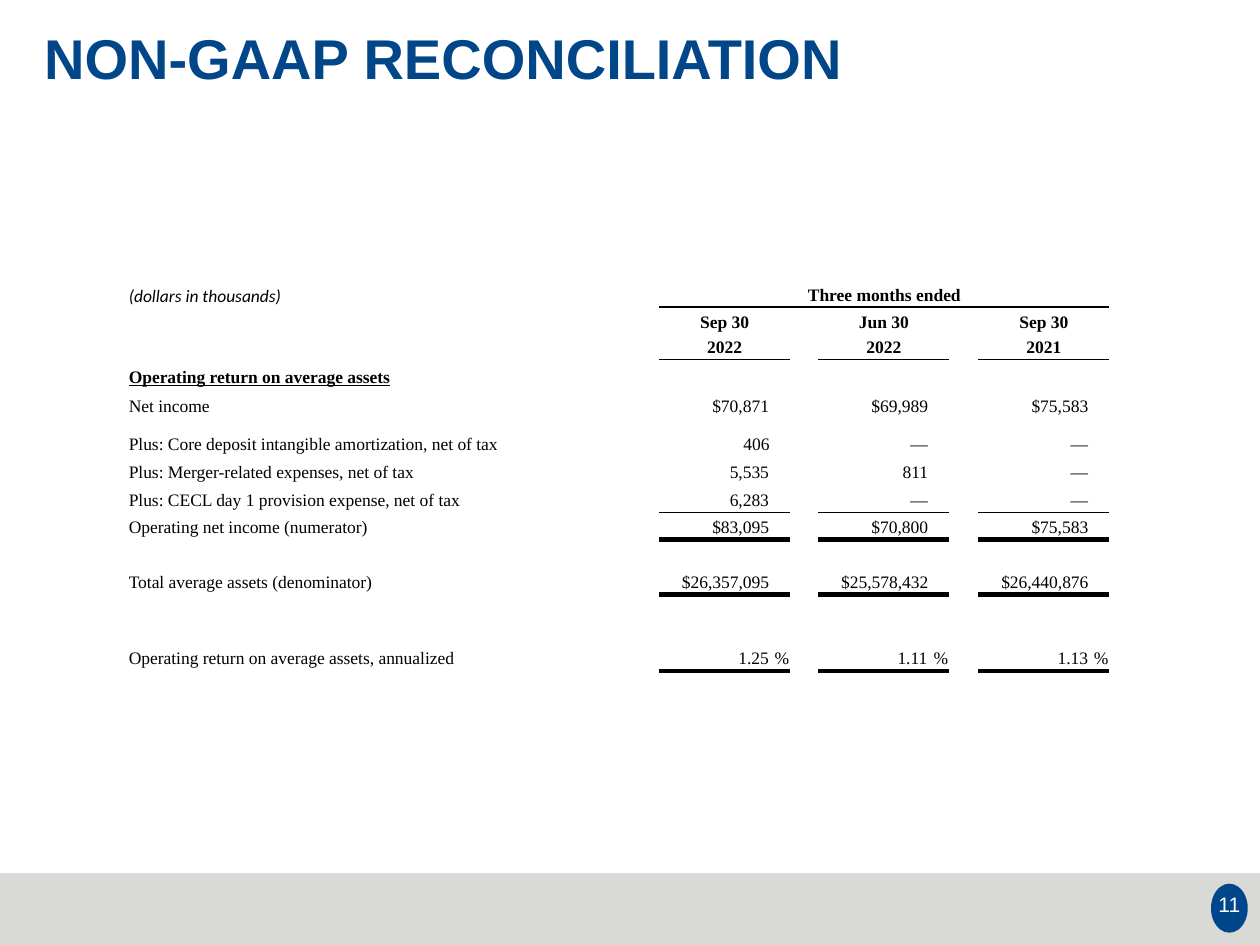
import pptx
import pptx.dml.color
import pptx.enum.shapes
import pptx.enum.text
import pptx.oxml
import pptx.oxml.ns
import pptx.util
from lxml import etree

Pt = pptx.util.Pt
ALIGN = pptx.enum.text.PP_ALIGN
ANCHOR = pptx.enum.text.MSO_ANCHOR
SHAPE = pptx.enum.shapes.MSO_SHAPE
qn = pptx.oxml.ns.qn

BLUE = pptx.dml.color.RGBColor(0x00, 0x46, 0x8B)
TITLE_BLUE = pptx.dml.color.RGBColor(0x00, 0x46, 0x89)
GREY = pptx.dml.color.RGBColor(0xD9, 0xD9, 0xD6)
BLACK = pptx.dml.color.RGBColor(0, 0, 0)
WHITE = pptx.dml.color.RGBColor(255, 255, 255)


def write(frame, text, font="Times New Roman", size=10, color=BLACK, bold=False,
          italic=False, underline=False, align=ALIGN.LEFT, spacing=1.0, tabs=()):
    paragraph = frame.paragraphs[0]
    paragraph.alignment = align
    paragraph.line_spacing = spacing
    if tabs:
        tab_list = etree.SubElement(paragraph._p.get_or_add_pPr(), qn("a:tabLst"))
        for stop in tabs:
            etree.SubElement(tab_list, qn("a:tab"), pos=str(Pt(stop)), algn="l")
    run = paragraph.add_run()
    run.text = text
    run.font.name, run.font.size = font, Pt(size)
    run.font.bold, run.font.italic, run.font.underline = bold, italic, underline
    run.font.color.rgb = color


def draw_borders(cell, top, bottom):
    """Draw black rules of the given widths, white where 0; the sides stay open."""
    for side, width in (("L", None), ("R", None), ("T", top), ("B", bottom)):
        line = etree.SubElement(cell._tc.get_or_add_tcPr(), qn(f"a:ln{side}"),
                                w=str(Pt(width or 1)))
        if width is None:
            etree.SubElement(line, qn("a:noFill"))
        else:
            fill = etree.SubElement(line, qn("a:solidFill"))
            etree.SubElement(fill, qn("a:srgbClr"), val=str(BLACK if width else WHITE))


deck = pptx.Presentation()
deck.slide_width, deck.slide_height = Pt(720), Pt(540)
slide = deck.slides.add_slide(deck.slide_layouts[5])

# Footer band and page badge
for kind, box, color in (
    (SHAPE.RECTANGLE, (0, 499, 720, 41), GREY),
    (SHAPE.OVAL, (692, 505, 21, 28), BLUE),
):
    part = slide.shapes.add_shape(kind, *map(Pt, box))
    part.shadow.inherit = False
    part.fill.solid()
    part.fill.fore_color.rgb = color
    part.line.fill.background()

# Title and page number
title = slide.shapes.title
title.left, title.top, title.width, title.height = Pt(18), Pt(14), Pt(696), Pt(82)
page_number = slide.shapes.add_textbox(Pt(685.5), Pt(504), Pt(34), Pt(28))
for frame, anchor in ((title.text_frame, ANCHOR.TOP),
                      (page_number.text_frame, ANCHOR.MIDDLE)):
    frame.word_wrap = True
    frame.vertical_anchor = anchor
    frame.margin_left = frame.margin_right = frame.margin_bottom = Pt(7.2)
    frame.margin_top = Pt(4)
write(title.text_frame, "NON-GAAP RECONCILIATION", font="Arial", size=32,
      color=TITLE_BLUE, bold=True, spacing=0.9)
write(page_number.text_frame, "11", font="Arial", size=12, color=WHITE,
      align=ALIGN.CENTER)

# Reconciliation table: label, gap, then three periods with gaps between
COLUMN_WIDTHS = (265, 40, 75, 16, 75, 16.5, 75)
ROW_HEIGHTS = (15, 15.5, 14.5, 2.5, 14.5, 16.5, 22, 16, 16, 15.5, 16, 15.5, 16.5, 27, 16)
PERIOD_COLUMNS = (2, 4, 6)
RULES_BELOW = {2: 1, 8: 1, 9: 3, 11: 3, 13: 3}
TAB_BY_LENGTH = {1: 49.7, 3: 45.2, 5: 37.4, 7: 27.4, 11: 10.1}

headings = {
    1: ("Sep 30", "Jun 30", "Sep 30"),
    2: ("2022", "2022", "2021"),
}
lines = {
    5: ("Net income", "$70,871", "$69,989", "$75,583"),
    6: ("Plus: Core deposit intangible amortization, net of tax", "406", "—", "—"),
    7: ("Plus: Merger-related expenses, net of tax", "5,535", "811", "—"),
    8: ("Plus: CECL day 1 provision expense, net of tax", "6,283", "—", "—"),
    9: ("Operating net income (numerator)", "$83,095", "$70,800", "$75,583"),
    11: ("Total average assets (denominator)", "$26,357,095", "$25,578,432", "$26,440,876"),
    13: ("Operating return on average assets, annualized", "1.25\t%", "1.11\t%", "1.13\t%"),
}

table = slide.shapes.add_table(
    len(ROW_HEIGHTS), len(COLUMN_WIDTHS), Pt(71.6), Pt(160.5),
    Pt(sum(COLUMN_WIDTHS)), Pt(sum(ROW_HEIGHTS))).table
table.first_row = table.horz_banding = False
for column, width in zip(table.columns, COLUMN_WIDTHS):
    column.width = Pt(width)
for row, height in zip(table.rows, ROW_HEIGHTS):
    row.height = Pt(height)

rules = [[RULES_BELOW.get(row, 0) if column in PERIOD_COLUMNS else 0
          for column in range(len(COLUMN_WIDTHS))] for row in range(len(ROW_HEIGHTS))]
rules[0][2:] = [1] * 5
for row, widths in enumerate(rules):
    for column, bottom in enumerate(widths):
        cell = table.cell(row, column)
        draw_borders(cell, rules[row - 1][column] if row else 0, bottom)
        cell.fill.background()
        cell.vertical_anchor = ANCHOR.BOTTOM
        is_amount = row in lines and column in PERIOD_COLUMNS
        cell.margin_left = Pt(0 if is_amount else 2)
        cell.margin_right = Pt(0.7 if is_amount else 2)
        cell.margin_top = 0
        cell.margin_bottom = Pt(1.2 if row in lines or row in headings or row == 4 else 0)

for first, last in (((0, 2), (0, 6)), ((2, 0), (2, 1)), ((4, 0), (4, 4))):
    table.cell(*first).merge(table.cell(*last))

write(table.cell(0, 0).text_frame, "(dollars in thousands)", font="Calibri", italic=True)
write(table.cell(0, 2).text_frame, "Three months ended", bold=True, align=ALIGN.CENTER)
table.cell(0, 2).margin_bottom = Pt(1.2)
write(table.cell(4, 0).text_frame, "Operating return on average assets",
      bold=True, underline=True)
for row, texts in headings.items():
    for column, text in zip(PERIOD_COLUMNS, texts):
        write(table.cell(row, column).text_frame, text, bold=True, align=ALIGN.CENTER)
for row, (label, *amounts) in lines.items():
    write(table.cell(row, 0).text_frame, label)
    for column, amount in zip(PERIOD_COLUMNS, amounts):
        if "%" in amount:
            text, tabs = f"\t{amount}", (44.3, 65)
        else:
            text, tabs = f"\t{amount}\t", (TAB_BY_LENGTH[len(amount)], 71.3)
        write(table.cell(row, column).text_frame, text, align=ALIGN.RIGHT, tabs=tabs)

# Empty cells get a tiny font so that they do not stretch their rows
for cell in table.iter_cells():
    if not cell.text_frame.text:
        etree.SubElement(cell.text_frame.paragraphs[0]._p, qn("a:endParaRPr"), sz="100")

deck.save("out.pptx")
